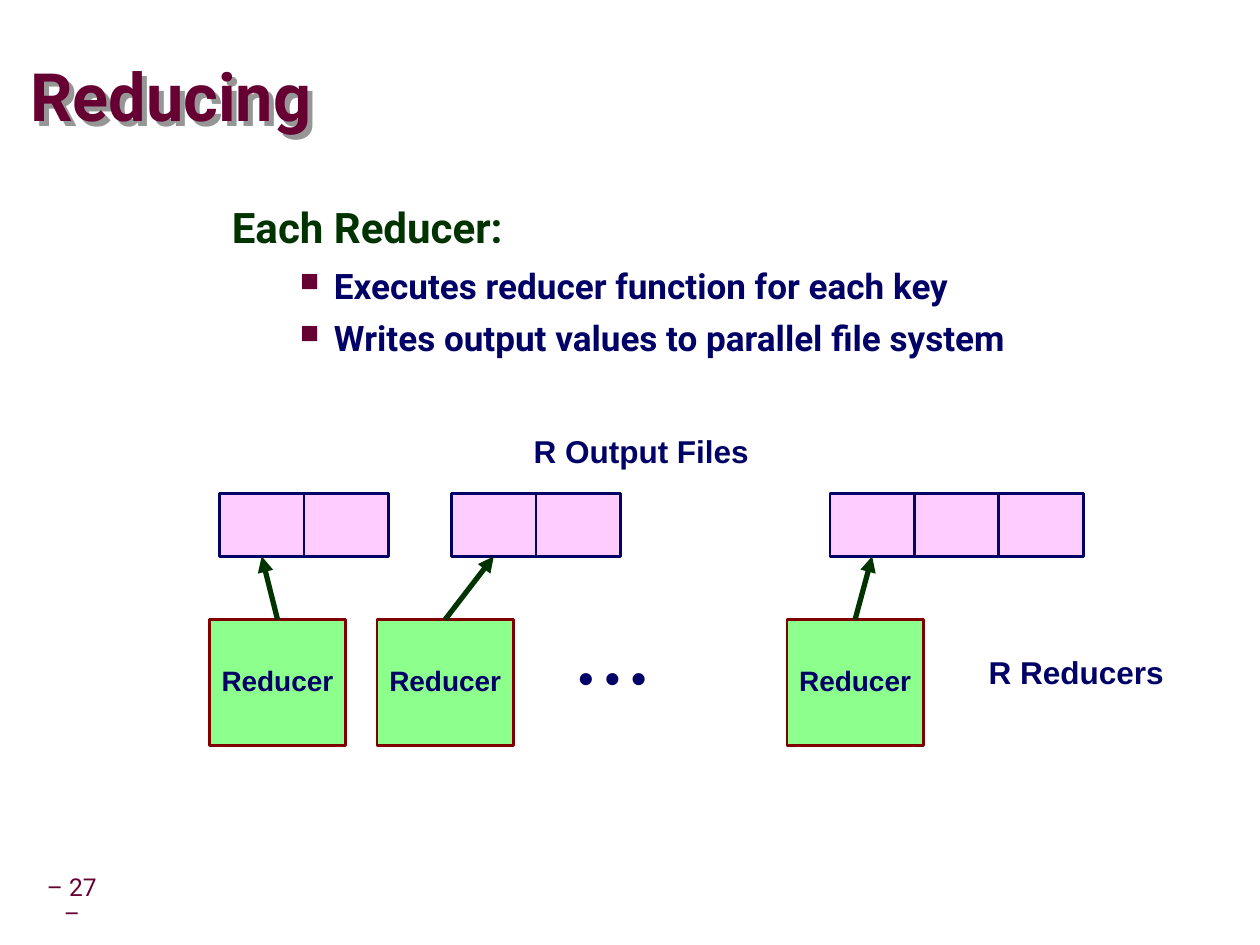
from pptx import Presentation
from pptx.dml.color import RGBColor
from pptx.enum.shapes import MSO_CONNECTOR as Link, MSO_SHAPE as Shape
from pptx.enum.text import MSO_ANCHOR as Anchor, PP_ALIGN as Align
from pptx.oxml import parse_xml
from pptx.oxml.ns import nsdecls
from pptx.util import Inches, Pt

WINE = RGBColor(0x66, 0x00, 0x33)
NAVY = RGBColor(0x00, 0x00, 0x66)
FOREST = RGBColor(0x00, 0x33, 0x00)
MAROON = RGBColor(0x80, 0x00, 0x00)
GREEN = RGBColor(0x8C, 0xFF, 0x8C)
PINK = RGBColor(0xFF, 0xCC, 0xFF)

deck = Presentation()
deck.slide_width, deck.slide_height = Inches(9.99), Inches(7.49)
slide = deck.slides.add_slide(deck.slide_layouts[6])
shapes = slide.shapes


def write(para, text, size, color, face="Arial", bold=True, **form):
    run = para.add_run()
    run.text = text
    look = {"size": Pt(size), "name": face, "bold": bold}
    for key, value in look.items():
        setattr(run.font, key, value)
    run.font.color.rgb = color
    for key, value in form.items():
        setattr(para, key, value)


def frame(shape, inset_x, inset_y, wrap=True, anchor=Anchor.TOP):
    text = shape.text_frame
    look = {"margin_left": Inches(inset_x), "margin_right": Inches(inset_x),
            "margin_top": Inches(inset_y), "margin_bottom": Inches(inset_y),
            "word_wrap": wrap, "vertical_anchor": anchor}
    for key, value in look.items():
        setattr(text, key, value)
    return text


# Title with its shadow
title = shapes.add_textbox(Inches(0.24), Inches(0.33), Inches(9.52), Inches(0.85))
text = frame(title, 0, 0, anchor=Anchor.MIDDLE)
write(text.paragraphs[0], "Reducing", 38, WINE, "Roboto")
title._element.spPr.append(parse_xml(
    f'<a:effectLst {nsdecls("a")}><a:outerShdw dist="50800" dir="2700000">'
    '<a:srgbClr val="969696"/></a:outerShdw></a:effectLst>'))

# Body: heading and bullets
body = shapes.add_textbox(Inches(1.74), Inches(1.58), Inches(7.17), Inches(1.58))
text = frame(body, 0.1, 0.05)
write(text.paragraphs[0], "Each Reducer:", 24, FOREST, "Roboto", line_spacing=0.95)
for item in ("Executes reducer function for each key",
             "Writes output values to parallel file system"):
    para = text.add_paragraph()
    write(para, item, 20, NAVY, "Roboto", level=1, space_before=Pt(6))
    props = para._p.get_or_add_pPr()
    props.set("marL", str(Inches(0.81)))
    props.set("indent", str(Inches(-0.27)))
    for mark in (f'<a:buClr {nsdecls("a")}><a:srgbClr val="{WINE}"/></a:buClr>',
                 f'<a:buSzPct {nsdecls("a")} val="75000"/>',
                 f'<a:buChar {nsdecls("a")} char="■"/>'):
        props.append(parse_xml(mark))

# Reducers, their output files and the arrows between them
for left, start, count in ((1.66, 1.74, 2), (2.99, 3.58, 2), (6.24, 6.58, 3)):
    box = shapes.add_shape(Shape.RECTANGLE, Inches(left), Inches(4.91),
                           Inches(1.08), Inches(1))
    cells = [shapes.add_shape(Shape.RECTANGLE, Inches(start + 0.67 * i),
                              Inches(3.91), Inches(0.67), Inches(0.5))
             for i in range(count)]
    for rect, fill, edge in [(box, GREEN, MAROON)] + [(c, PINK, NAVY) for c in cells]:
        rect.shadow.inherit = False
        rect.fill.solid()
        rect.fill.fore_color.rgb = fill
        rect.line.color.rgb = edge
        rect.line.width = Pt(1.5)
    text = frame(box, 0.05, 0.05, anchor=Anchor.MIDDLE)
    write(text.paragraphs[0], "Reducer", 16, NAVY,
          alignment=Align.CENTER, line_spacing=0.9)

    arrow = shapes.add_connector(Link.STRAIGHT, 0, 0, 0, 0)
    arrow.begin_connect(box, 0)
    arrow.end_connect(cells[0], 2)
    arrow.line.color.rgb = FOREST
    arrow.line.width = Pt(3)
    arrow.line._get_or_add_ln().append(
        parse_xml(f'<a:tailEnd {nsdecls("a")} type="triangle"/>'))
    arrow._element.spPr.append(parse_xml(f'<a:effectLst {nsdecls("a")}/>'))

# Labels
for label, left, top, width, high, size, align in (
        ("R Output Files", 4.12, 3.41, 1.93, 0.38, 18, Align.CENTER),
        ("• • •", 4.49, 5.16, 1.34, 0.47, 24, Align.LEFT),
        ("R Reducers", 7.74, 5.16, 1.6, 0.38, 18, Align.LEFT)):
    note = shapes.add_textbox(Inches(left), Inches(top), Inches(width), Inches(high))
    text = frame(note, 0.1, 0.05)
    write(text.paragraphs[0], label, size, NAVY, alignment=align, line_spacing=0.9)

# Page number, narrow enough to wrap
page = shapes.add_textbox(Inches(0.24), Inches(6.99), Inches(0.66), Inches(0.31))
text = frame(page, 0.09, 0.05, anchor=Anchor.MIDDLE)
write(text.paragraphs[0], "– 27 –", 14, WINE, "Roboto", False,
      alignment=Align.CENTER, line_spacing=0.9)

deck.save("out.pptx")
